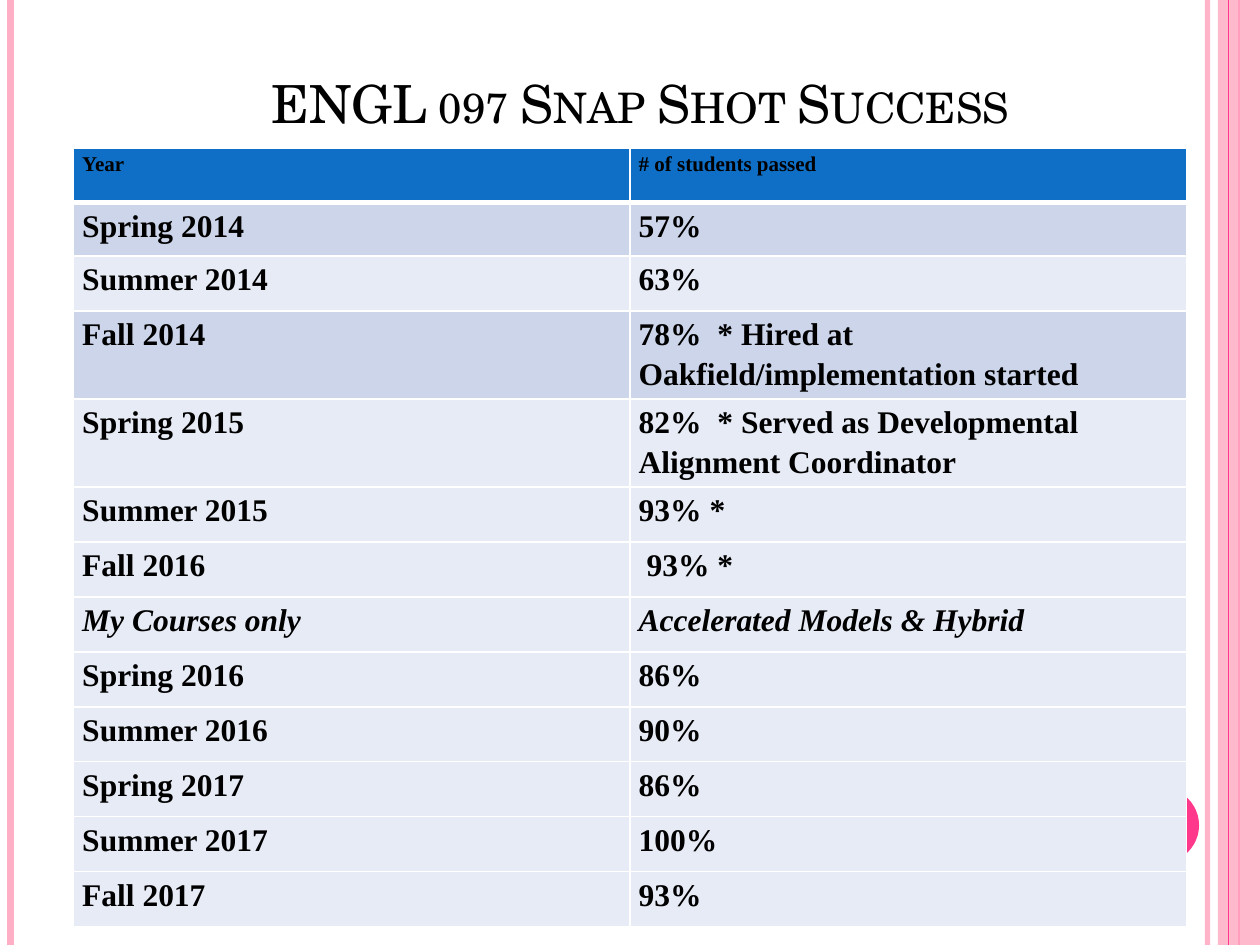
from pptx import Presentation
from pptx.dml.color import RGBColor
from pptx.enum.shapes import MSO_CONNECTOR as CONNECTOR, MSO_SHAPE as SHAPE
from pptx.enum.text import MSO_ANCHOR as ANCHOR, PP_ALIGN as ALIGN
from pptx.oxml.ns import qn
from pptx.util import Pt
from lxml.etree import SubElement

WIDTH, HEIGHT = 720, 540
PINK, LIGHT_PINK, BLACK, WHITE = "FF388C", "FFAFC5", "000000", "FFFFFF"
BLUE, DARK_BAND, LIGHT_BAND = "0F6FC6", "CCD5EA", "E7EBF5"
TITLE_FONT, TABLE_FONT = "TeX Gyre Schola", "Times New Roman"

TITLE = "ENGL 097 Snap Shot Success"
ROWS = [
    ("Year", "# of students passed"),
    ("Spring 2014", "57%"),
    ("Summer 2014", "63%"),
    ("Fall 2014", "78%  * Hired at Oakfield/implementation started"),
    ("Spring 2015", "82%  * Served as Developmental  Alignment Coordinator"),
    ("Summer 2015", "93% *"),
    ("Fall 2016", " 93% *"),
    ("My Courses only", "Accelerated Models & Hybrid"),
    ("Spring 2016", "86%"),
    ("Summer 2016", "90%"),
    ("Spring 2017", "86%"),
    ("Summer 2017", "100%"),
    ("Fall 2017", "93%"),
]
ITALIC_ROW = 7
DARK_ROWS = (1, 3)
ROW_HEIGHT, FIRST_ROW_HEIGHT = 31.4, 30.4
TABLE_LEFT, TABLE_TOP, COLUMN_WIDTH = 42, 84.5, 318


def color(value):
    return RGBColor.from_string(value)


def set_alpha(fill_parent, percent):
    tint = fill_parent.find(".//" + qn("a:srgbClr"))
    SubElement(tint, qn("a:alpha"), val=str(percent * 1000))


def add_stripe(page, x, tint, weight, opacity=100):
    """Draw a vertical line over the full height of the page."""
    stripe = page.shapes.add_connector(CONNECTOR.STRAIGHT, Pt(x), 0, Pt(x), Pt(HEIGHT))
    stripe.line.color.rgb = color(tint)
    stripe.line.width = Pt(weight)
    properties = stripe._element.spPr
    if opacity < 100:
        set_alpha(properties, opacity)
    SubElement(properties, qn("a:effectLst"))


def add_solid(page, kind, left, top, width, height, tint, opacity=100):
    solid = page.shapes.add_shape(kind, Pt(left), Pt(top), Pt(width), Pt(height))
    solid.shadow.inherit = False
    solid.fill.solid()
    solid.fill.fore_color.rgb = color(tint)
    solid.line.fill.background()
    if opacity < 100:
        set_alpha(solid._element.spPr, opacity)


def add_title(page):
    box = page.shapes.add_textbox(Pt(72), Pt(30), Pt(588), Pt(50.4))
    frame = box.text_frame
    frame.word_wrap = True
    frame.vertical_anchor = ANCHOR.BOTTOM
    frame.text = TITLE
    para = frame.paragraphs[0]
    para.alignment = ALIGN.CENTER
    font = para.runs[0].font
    font.name, font.size = TITLE_FONT, Pt(30)
    font.color.rgb = color(BLACK)
    para.runs[0]._r.get_or_add_rPr().set("cap", "small")


def add_borders(cell, top, bottom):
    properties = cell._tc.get_or_add_tcPr()
    for side, weight in (("L", 1), ("R", 1), ("T", top), ("B", bottom)):
        edge = SubElement(properties, qn("a:ln" + side), w=str(Pt(weight)))
        fill = SubElement(edge, qn("a:solidFill"))
        SubElement(fill, qn("a:srgbClr"), val=WHITE)


def format_cell(cell, text, row):
    header = row == 0
    add_borders(cell, top=3 if row == 1 else 1, bottom=3 if header else 1)
    cell.fill.solid()
    band = BLUE if header else DARK_BAND if row in DARK_ROWS else LIGHT_BAND
    cell.fill.fore_color.rgb = color(band)
    cell.margin_left = cell.margin_right = Pt(5)
    cell.margin_top, cell.margin_bottom = Pt(0.7), 0
    cell.text_frame.text = text
    para = cell.text_frame.paragraphs[0]
    para.line_spacing = 1.15
    font = para.runs[0].font
    font.name, font.size = TABLE_FONT, Pt(12 if header else 18)
    font.bold, font.italic = True, row == ITALIC_ROW
    font.color.rgb = color(BLACK)


def add_results(page):
    frame = page.shapes.add_table(len(ROWS), 2, Pt(TABLE_LEFT), Pt(TABLE_TOP),
                                  Pt(2 * COLUMN_WIDTH), Pt(ROW_HEIGHT * len(ROWS)))
    table = frame.table
    for column in table.columns:
        column.width = Pt(COLUMN_WIDTH)
    for row, texts in enumerate(ROWS):
        table.rows[row].height = Pt(FIRST_ROW_HEIGHT if row == 1 else ROW_HEIGHT)
        for column, text in enumerate(texts):
            format_cell(table.cell(row, column), text, row)


def main():
    deck = Presentation()
    deck.slide_width, deck.slide_height = Pt(WIDTH), Pt(HEIGHT)
    page = deck.slides.add_slide(deck.slide_layouts[6])
    add_stripe(page, 690, LIGHT_PINK, 3, opacity=93)
    add_stripe(page, 6, LIGHT_PINK, 4.5)
    add_stripe(page, 708, PINK, 1.5)
    add_solid(page, SHAPE.RECTANGLE, 696, 0, 24, HEIGHT, LIGHT_PINK, opacity=87)
    add_stripe(page, 702, PINK, 0.75)
    add_solid(page, SHAPE.OVAL, 642, 450, 43.2, 43.2, PINK)
    add_title(page)
    add_results(page)
    deck.save("out.pptx")


if __name__ == "__main__":
    main()
